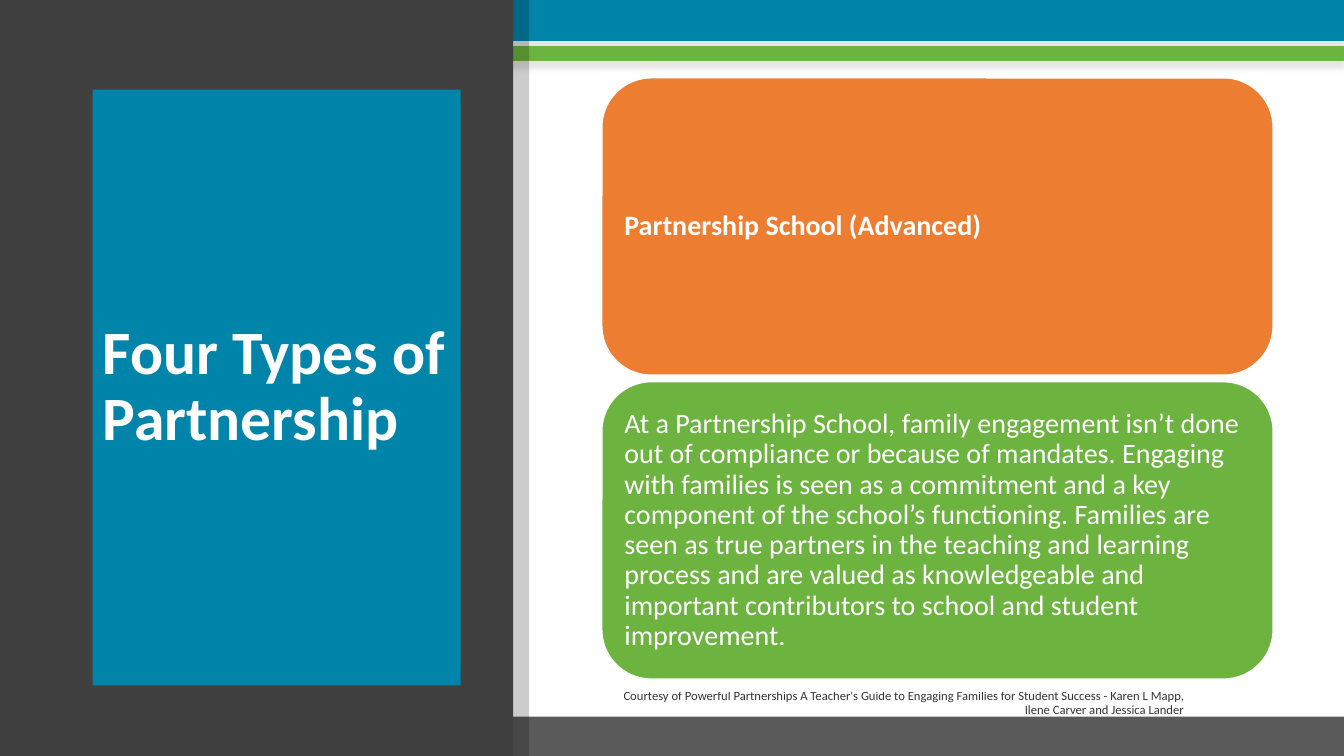
from dataclasses import dataclass
from typing import Optional

import pptx
import pptx.dml.color
import pptx.enum.shapes
import pptx.enum.text
import pptx.oxml
import pptx.oxml.ns
import pptx.util

SHAPES = pptx.enum.shapes.MSO_SHAPE
ALIGN = pptx.enum.text.PP_ALIGN
WIDTH, HEIGHT = pptx.util.Inches(13.33), pptx.util.Inches(7.5)
BLUE, GREEN, ORANGE = "0084A9", "6CB33F", "ED7D31"
WHITE, BLACK, DARK, GREY = "FFFFFF", "000000", "404040", "5A5A5A"


@dataclass
class Area:
    """Left, top, width and height in percent of the slide."""
    left: float
    top: float
    width: float
    height: float

    def lengths(self) -> tuple[int, ...]:
        shares = ((self.left, WIDTH), (self.top, HEIGHT),
                  (self.width, WIDTH), (self.height, HEIGHT))
        return tuple(round(share * whole / 100) for share, whole in shares)


@dataclass
class Panel:
    area: Area
    fill: str
    line: Optional[str] = None
    opacity: int = 100
    shadow: bool = False
    rounded: bool = False


@dataclass
class Wording:
    text: str
    size: float
    bold: bool = False
    color: str = WHITE
    opacity: int = 100
    align: ALIGN = ALIGN.LEFT
    space_after: float = 0
    inset: Optional[float] = None


def paint(fill, color: str, opacity: int = 100) -> None:
    fill.solid()
    fill.fore_color.rgb = pptx.dml.color.RGBColor.from_string(color)
    if opacity < 100:
        holder = fill._xPr.find(pptx.oxml.ns.qn("a:solidFill"))
        alpha = pptx.oxml.parse_xml(
            f'<a:alpha {pptx.oxml.ns.nsdecls("a")} val="{opacity * 1000}"/>')
        holder[0].append(alpha)


def cast_shadow(shape) -> None:
    """Give the shape a soft shadow straight below it."""
    effects = shape._element.spPr.find(pptx.oxml.ns.qn("a:effectLst"))
    distance = pptx.util.Pt(4)
    effects.append(pptx.oxml.parse_xml(
        f'<a:outerShdw {pptx.oxml.ns.nsdecls("a")} blurRad="{distance}" '
        f'dist="{distance}" dir="5400000" algn="t" rotWithShape="0">'
        f'<a:srgbClr val="{BLACK}"><a:alpha val="9000"/></a:srgbClr>'
        '</a:outerShdw>'))


def draw_panel(slide, panel: Panel):
    preset = SHAPES.ROUNDED_RECTANGLE if panel.rounded else SHAPES.RECTANGLE
    shape = slide.shapes.add_shape(preset, *panel.area.lengths())
    shape.shadow.inherit = False
    paint(shape.fill, panel.fill, panel.opacity)
    if panel.line:
        paint(shape.line.fill, panel.line)
        shape.line.width = pptx.util.Pt(1)
    else:
        shape.line.fill.background()
    if panel.shadow:
        cast_shadow(shape)
    return shape


def write(shape, wording: Wording) -> None:
    frame = shape.text_frame
    frame.text = wording.text
    frame.word_wrap = True
    frame.vertical_anchor = pptx.enum.text.MSO_ANCHOR.MIDDLE
    if wording.inset is not None:
        inset = pptx.util.Inches(wording.inset)
        frame.margin_left = frame.margin_right = inset
        frame.margin_top = frame.margin_bottom = inset
    paragraph = frame.paragraphs[0]
    paragraph.alignment = wording.align
    paragraph.line_spacing = 0.9
    paragraph.space_after = pptx.util.Pt(wording.space_after)
    font = paragraph.runs[0].font
    font.name = "Calibri"
    font.size = pptx.util.Pt(wording.size)
    font.bold = wording.bold
    paint(font.fill, wording.color, wording.opacity)


SIDE = 38.18
CARD_LEFT, CARD_TOP, CARD_PITCH = 44.78, 10.3, 40.2

BACKDROP = [
    Panel(Area(0, 0, 100, 5.33), BLUE, line=BLUE, shadow=True),
    Panel(Area(0, 6.13, 100, 1.87), GREEN, line=GREEN, shadow=True),
    Panel(Area(0, 94.8, 100, 5.2), GREY),
    Panel(Area(0, 0, SIDE, 100), DARK),
]
TITLE_PANEL = Panel(Area(6.9, 11.87, 27.38, 78.8), BLUE)
TITLE = Wording("Four Types of Partnership", 44, bold=True)
EDGE = Panel(Area(SIDE, 0, 1.2, 100), BLACK, opacity=20)
CREDIT_AREA = Area(CARD_LEFT, 90.4, 44.03, 5.33)
CREDIT = Wording(
    "Courtesy of Powerful Partnerships A Teacher's Guide to Engaging Families "
    "for Student Success - Karen L Mapp, Ilene Carver and Jessica Lander",
    9, color=BLACK, opacity=80, align=ALIGN.RIGHT, space_after=6)
CARDS = [
    (ORANGE, Wording("Partnership School (Advanced)", 20, bold=True,
                     space_after=7, inset=0.08)),
    (GREEN, Wording(
        "At a Partnership School, family engagement isn’t done out of "
        "compliance or because of mandates. Engaging with families is seen as "
        "a commitment and a key component of the school’s functioning. "
        "Families are seen as true partners in the teaching and learning "
        "process and are valued as knowledgeable and important contributors "
        "to school and student improvement.",
        20, space_after=7, inset=0.08)),
]


def main() -> None:
    deck = pptx.Presentation()
    deck.slide_width, deck.slide_height = WIDTH, HEIGHT
    slide = deck.slides.add_slide(deck.slide_layouts[6])

    for panel in BACKDROP:
        draw_panel(slide, panel)
    write(draw_panel(slide, TITLE_PANEL), TITLE)
    draw_panel(slide, EDGE)
    write(slide.shapes.add_textbox(*CREDIT_AREA.lengths()), CREDIT)
    for row, (color, wording) in enumerate(CARDS):
        area = Area(CARD_LEFT, CARD_TOP + row * CARD_PITCH, 49.95, 39.33)
        card = Panel(area, color, line=WHITE, rounded=True)
        write(draw_panel(slide, card), wording)

    deck.save("out.pptx")


if __name__ == "__main__":
    main()
